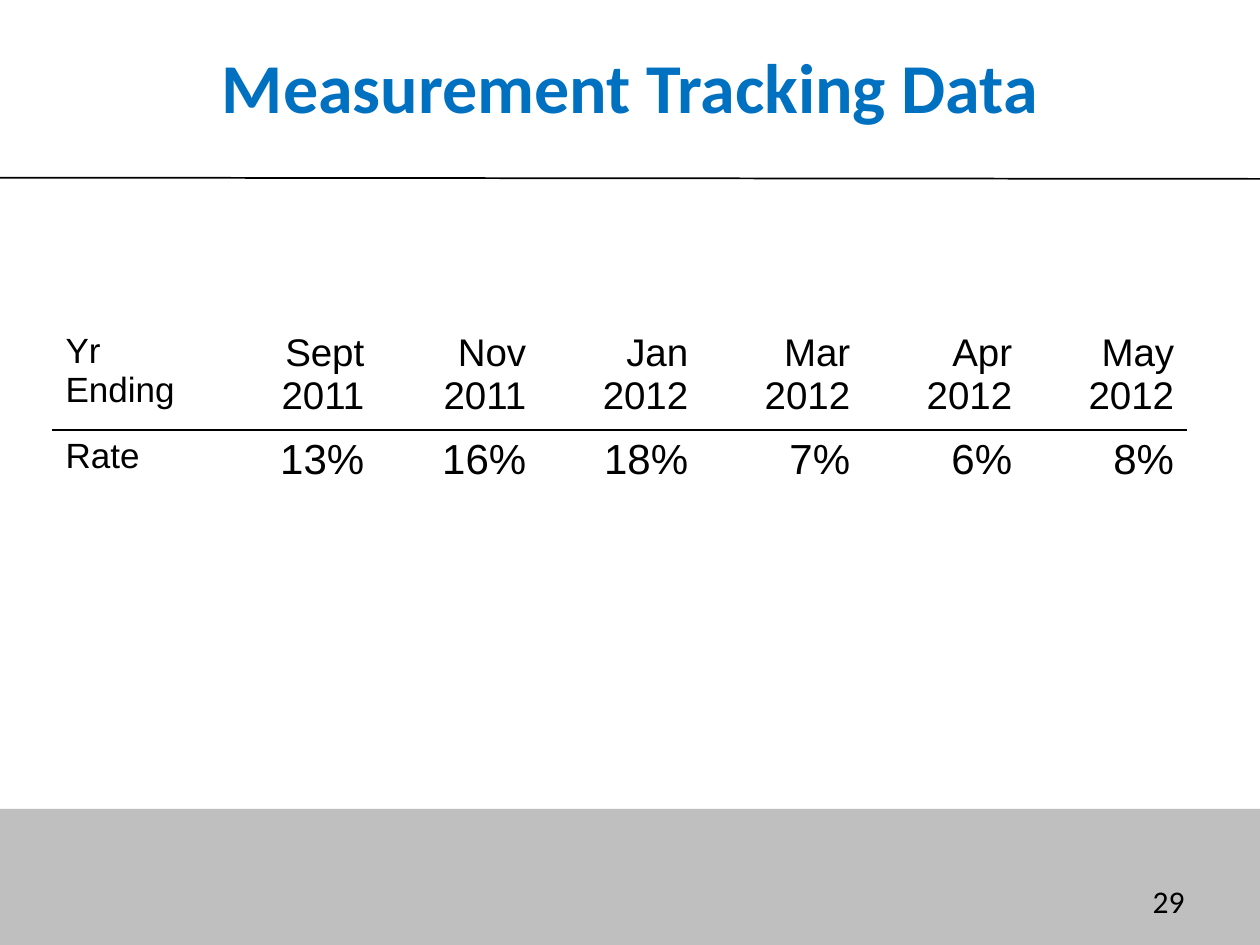
from dataclasses import dataclass

from lxml.etree import SubElement
from pptx import Presentation
from pptx.dml.color import RGBColor
from pptx.enum.shapes import MSO_CONNECTOR, MSO_SHAPE
from pptx.enum.text import MSO_ANCHOR as Anchor, PP_ALIGN as Align
from pptx.oxml.ns import qn
from pptx.util import Inches, Pt


@dataclass(frozen=True)
class Theme:
    title_color: RGBColor = RGBColor(0x00, 0x70, 0xC0)
    ink: RGBColor = RGBColor(0x00, 0x00, 0x00)
    band: RGBColor = RGBColor(0xBF, 0xBF, 0xBF)
    heading_font: str = "Calibri"
    table_font: str = "Arial"
    title_size: int = 40
    number_size: int = 18
    label_size: int = 20
    period_size: int = 22
    rate_size: int = 24
    rule_width: int = 1


THEME = Theme()

PERIODS = ["Sept 2011", "Nov\n2011", "Jan 2012", "Mar 2012", "Apr 2012", "May 2012"]
RATES = ["13%", "16%", "18%", "7%", "6%", "8%"]
ROWS = [
    ("Yr Ending", PERIODS, THEME.period_size, "a:lnB"),
    ("Rate", RATES, THEME.rate_size, "a:lnT"),
]


def write_text(frame, text, font, size, color, align, bold=False):
    frame.word_wrap = True
    for index, line in enumerate(text.split("\n")):
        paragraph = frame.add_paragraph() if index else frame.paragraphs[0]
        paragraph.alignment = align
        run = paragraph.add_run()
        run.text = line
        run.font.name = font
        run.font.size = Pt(size)
        run.font.bold = bold
        run.font.color.rgb = color


def add_text(slide, left, top, width, height, text, size, color, align, anchor, bold=False):
    box = slide.shapes.add_textbox(Inches(left), Inches(top), Inches(width), Inches(height))
    box.text_frame.vertical_anchor = anchor
    write_text(box.text_frame, text, THEME.heading_font, size, color, align, bold)


def add_footer_band(slide):
    band = slide.shapes.add_shape(
        MSO_SHAPE.RECTANGLE, Inches(0), Inches(6.42), Inches(10), Inches(1.08)
    )
    band.shadow.inherit = False
    band.fill.solid()
    band.fill.fore_color.rgb = THEME.band
    band.line.fill.background()


def add_title_rule(slide):
    rule = slide.shapes.add_connector(
        MSO_CONNECTOR.STRAIGHT, Inches(0), Inches(1.41), Inches(10), Inches(1.42)
    )
    rule.line.color.rgb = THEME.ink
    rule.line.width = Pt(THEME.rule_width)
    SubElement(rule._element.spPr, qn("a:effectLst"))


def set_border(cell, edge):
    properties = cell._tc.get_or_add_tcPr()
    line = SubElement(properties, qn(edge), w=str(Pt(THEME.rule_width)))
    fill = SubElement(line, qn("a:solidFill"))
    SubElement(fill, qn("a:srgbClr"), val=str(THEME.ink))


def add_rate_table(slide):
    column_count = len(PERIODS) + 1
    table = slide.shapes.add_table(
        len(ROWS), column_count, Inches(0.42), Inches(2.58), Inches(9), Inches(1.48)
    ).table
    table.first_row = False
    table.horz_banding = False
    for column in table.columns:
        column.width = Inches(9 / column_count)
    for row, height in zip(table.rows, (0.79, 0.69)):
        row.height = Inches(height)
    for row, (label, values, value_size, edge) in zip(table.rows, ROWS):
        for index, (cell, text) in enumerate(zip(row.cells, [label, *values])):
            size = value_size if index else THEME.label_size
            align = Align.RIGHT if index else Align.LEFT
            write_text(cell.text_frame, text, THEME.table_font, size, THEME.ink, align)
            set_border(cell, edge)
            cell.fill.background()


def main():
    presentation = Presentation()
    presentation.slide_width = Inches(10)
    presentation.slide_height = Inches(7.5)
    slide = presentation.slides.add_slide(presentation.slide_layouts[6])
    add_footer_band(slide)
    add_title_rule(slide)
    add_text(slide, 7.17, 6.95, 2.33, 0.4, "29", THEME.number_size,
             THEME.ink, Align.RIGHT, Anchor.MIDDLE)
    add_text(slide, 0.5, 0.3, 9, 1.25, "Measurement Tracking Data", THEME.title_size,
             THEME.title_color, Align.CENTER, Anchor.TOP, bold=True)
    add_rate_table(slide)
    presentation.save("out.pptx")


if __name__ == "__main__":
    main()
